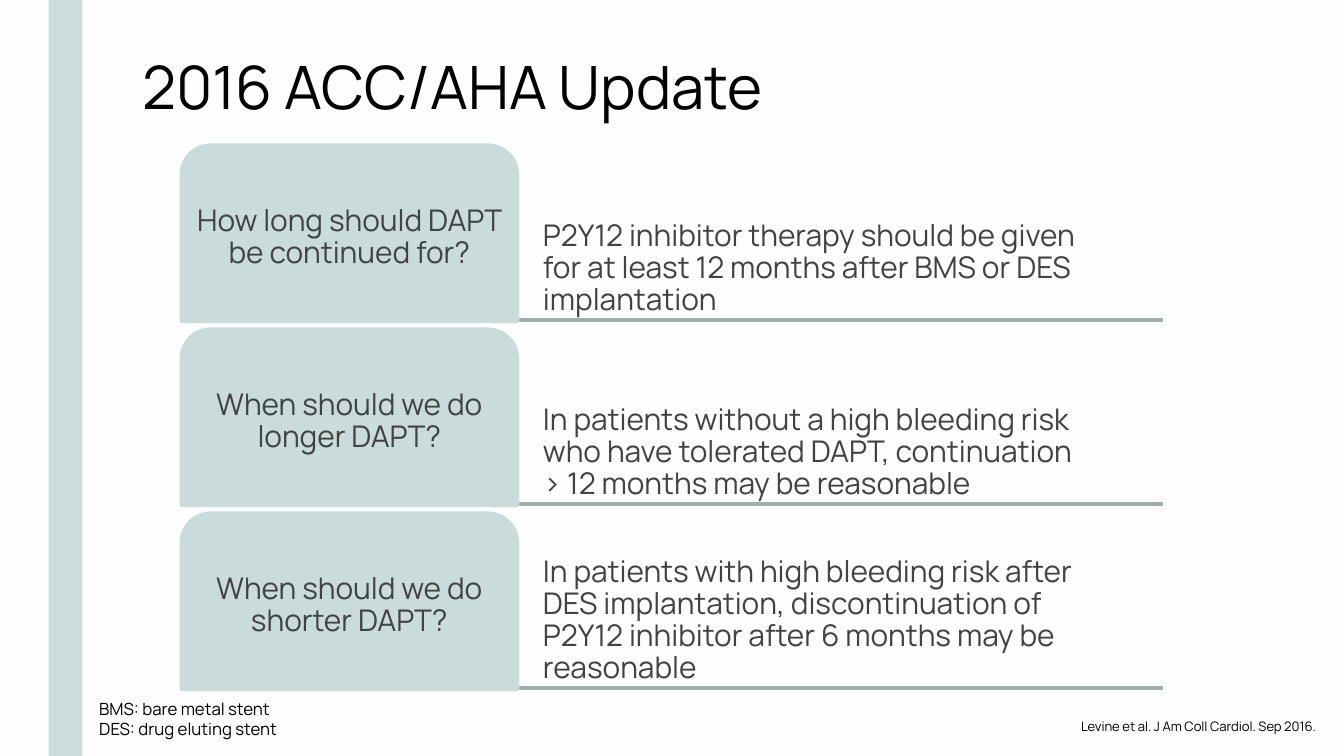
from pptx import Presentation
from pptx.dml.color import RGBColor
from pptx.enum.shapes import MSO_CONNECTOR, MSO_SHAPE
from pptx.enum.text import MSO_ANCHOR, PP_ALIGN
from pptx.oxml.ns import qn
from pptx.util import Pt
from lxml.etree import SubElement

FONT = "Manrope"
BACKGROUND = RGBColor(0xFD, 0xFD, 0xFD)
SIDEBAR = RGBColor(0xCA, 0xDC, 0xDC)
CARD = RGBColor(0xCA, 0xDB, 0xDB)
RULE = RGBColor(0xA0, 0xAE, 0xAE)
BODY = RGBColor(0x42, 0x42, 0x42)
BLACK = RGBColor(0, 0, 0)

ROW_TOP = 77.8
ROW_PITCH = 98.6
ROW_HEIGHT = 94.3
RULE_OFFSET = 93.6

ROWS = [
    ("How long should DAPT be continued for?",
     "P2Y12 inhibitor therapy should be given for at least 12 months "
     "after BMS or DES implantation"),
    ("When should we do longer DAPT?",
     "In patients without a high bleeding risk who have tolerated DAPT, "
     "continuation > 12 months may be reasonable"),
    ("When should we do shorter DAPT?",
     "In patients with high bleeding risk after DES implantation, "
     "discontinuation of P2Y12 inhibitor after 6 months may be reasonable"),
]

PLAIN_FRAME = {
    "word_wrap": True, "vertical_anchor": MSO_ANCHOR.TOP,
    "margin_left": Pt(7.2), "margin_right": Pt(7.2),
    "margin_top": Pt(3.6), "margin_bottom": Pt(3.6),
}
ROW_FRAME = {
    "word_wrap": True,
    "margin_left": Pt(2.2), "margin_right": Pt(2.2),
    "margin_top": Pt(2.2), "margin_bottom": Pt(2.2),
}
CARD_FRAME = {**ROW_FRAME, "vertical_anchor": MSO_ANCHOR.MIDDLE}
ANSWER_FRAME = {**ROW_FRAME, "vertical_anchor": MSO_ANCHOR.BOTTOM}


def set_attributes(target, values):
    for name, value in values.items():
        setattr(target, name, value)


def write_text(shape, lines, size, color, frame, alignment=PP_ALIGN.LEFT, spacing=1.0):
    text_frame = shape.text_frame
    set_attributes(text_frame, frame)
    text_frame.text = "\n".join(lines)
    for paragraph in text_frame.paragraphs:
        set_attributes(paragraph, {"alignment": alignment, "line_spacing": spacing})
        for run in paragraph.runs:
            set_attributes(run.font, {"name": FONT, "size": Pt(size)})
            run.font.color.rgb = color


def add_text(slide, box, lines, size, color, frame, **options):
    shape = slide.shapes.add_textbox(*map(Pt, box))
    write_text(shape, lines, size, color, frame, **options)


def add_filled_shape(slide, preset, box, color):
    shape = slide.shapes.add_shape(preset, *map(Pt, box))
    shape.shadow.inherit = False
    shape.fill.solid()
    shape.fill.fore_color.rgb = color
    shape.line.fill.background()
    return shape


def add_rule(slide, left, right, y):
    rule = slide.shapes.add_connector(
        MSO_CONNECTOR.STRAIGHT, Pt(left), Pt(y), Pt(right), Pt(y))
    rule.line.color.rgb = RULE
    rule.line.width = Pt(2)
    SubElement(rule._element.spPr, qn("a:effectLst"))


def add_question_card(slide, top, question):
    card = add_filled_shape(slide, MSO_SHAPE.ROUND_2_SAME_RECTANGLE,
                            (97.2, top, 180, ROW_HEIGHT), CARD)
    card.adjustments[0] = 0.167
    card.adjustments[1] = 0
    card.line.color.rgb = CARD
    card.line.width = Pt(2)
    write_text(card, [question], 16, BODY, CARD_FRAME,
               alignment=PP_ALIGN.CENTER, spacing=0.9)


def add_row(slide, top, question, answer):
    add_rule(slide, 122.4, 622.8, top + RULE_OFFSET)
    add_text(slide, (288.7, top, 298.1, ROW_HEIGHT), [answer], 16, BODY,
             ANSWER_FRAME, spacing=0.9)
    add_question_card(slide, top, question)


def main():
    presentation = Presentation()
    presentation.slide_width = Pt(720)
    presentation.slide_height = Pt(405)
    slide = presentation.slides.add_slide(presentation.slide_layouts[6])
    slide.background.fill.solid()
    slide.background.fill.fore_color.rgb = BACKGROUND

    add_filled_shape(slide, MSO_SHAPE.RECTANGLE, (26, -3.6, 18, 412.6), SIDEBAR)
    add_text(slide, (69.1, 23, 508.3, 46.1), ["2016 ACC/AHA Update"],
             32, BLACK, PLAIN_FRAME)
    add_text(slide, (409.7, 381.6, 302.4, 15.8),
             ["Levine et al. J Am Coll Cardiol. Sep 2016."],
             7, BLACK, PLAIN_FRAME, alignment=PP_ALIGN.RIGHT)
    for index, (question, answer) in enumerate(ROWS):
        add_row(slide, ROW_TOP + index * ROW_PITCH, question, answer)
    add_text(slide, (46.1, 370.8, 302.4, 37.4),
             ["BMS: bare metal stent", "DES: drug eluting stent"],
             9, BLACK, PLAIN_FRAME)

    presentation.save("out.pptx")


if __name__ == "__main__":
    main()
